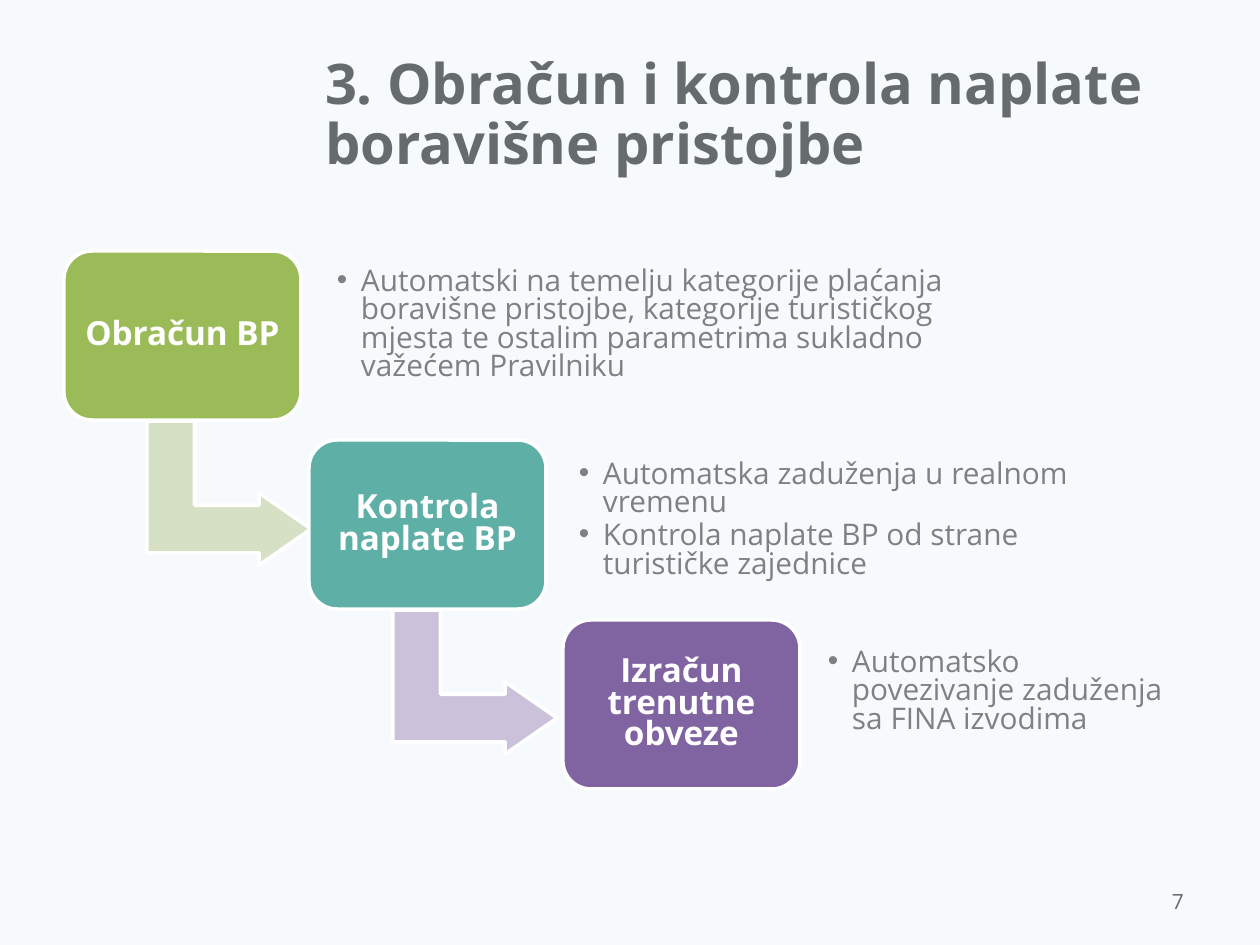
"""Build a slide with three descending steps, their explanations and bent arrows."""
from dataclasses import dataclass

from lxml import etree
from pptx import Presentation
from pptx.dml.color import RGBColor
from pptx.enum.shapes import MSO_SHAPE
from pptx.enum.text import MSO_ANCHOR, MSO_AUTO_SIZE, PP_ALIGN
from pptx.oxml.ns import qn
from pptx.util import Emu, Pt

BOX, ARROW = MSO_SHAPE.ROUNDED_RECTANGLE, MSO_SHAPE.BENT_UP_ARROW
MIDDLE, NO_FIT = MSO_ANCHOR.MIDDLE, MSO_AUTO_SIZE.NONE
LEFT, CENTER, RIGHT = PP_ALIGN.LEFT, PP_ALIGN.CENTER, PP_ALIGN.RIGHT
PX = 914400 / 126


@dataclass(frozen=True)
class Theme:
    font: str = "Open Sans"
    background: str = "F6FAFD"
    heading: str = "666B6E"
    body: str = "808080"
    white: str = "FFFFFF"
    title_size: int = 32
    label_size: int = 19
    body_size: int = 17
    number_size: int = 12


@dataclass(frozen=True)
class Rect:
    x: int
    y: int
    w: int
    h: int


@dataclass(frozen=True)
class Style:
    size: int
    color: str
    bold: bool = False
    align: PP_ALIGN = LEFT
    spacing: float = 1.0
    after: float = 0
    inset: int = 9
    bullet: bool = False


@dataclass(frozen=True)
class Step:
    label: str
    fill: str
    x: int
    y: int
    placeholder: int
    area: Rect
    points: tuple[str, ...]


@dataclass(frozen=True)
class Arrow:
    fill: str
    x: int
    y: int


THEME = Theme()
TITLE = Style(THEME.title_size, THEME.heading, True, spacing=0.9, inset=13)
LABEL = Style(THEME.label_size, THEME.white, True, CENTER, 0.8, inset=8)
LIST = Style(THEME.body_size, THEME.body, spacing=0.8, after=2.5, bullet=True)
NUMBER = Style(THEME.number_size, THEME.heading, align=RIGHT, inset=13)

STEPS = (
    Step("Obračun BP", "9BBB59", 64, 251, 1, Rect(328, 268, 649, 115),
         ("Automatski na temelju kategorije plaćanja boravišne pristojbe, "
          "kategorije turističkog mjesta te ostalim parametrima sukladno "
          "važećem Pravilniku",)),
    Step("Kontrola naplate BP", "5EAFA6", 309, 440, 2, Rect(570, 438, 581, 165),
         ("Automatska zaduženja u realnom vremenu",
          "Kontrola naplate BP od strane turističke zajednice")),
    Step("Izračun trenutne obveze", "8064A2", 563, 620, 4, Rect(819, 624, 360, 136),
         ("Automatsko povezivanje zaduženja sa FINA izvodima",)),
)
ARROWS = (Arrow("D5E0C4", 157, 411), Arrow("CCC1DA", 403, 600))


def px(n: int) -> Emu:
    """Turn pixels into EMU."""
    return Emu(round(n * PX))


def apply(obj, values: dict) -> None:
    """Set each named attribute on an object."""
    for name, value in values.items():
        setattr(obj, name, value)


def place(sp, rect: Rect) -> None:
    """Move and size a shape."""
    apply(sp, {"left": px(rect.x), "top": px(rect.y),
               "width": px(rect.w), "height": px(rect.h)})


def add_bullet(p) -> None:
    """Give a paragraph a hanging round bullet."""
    pPr = p._p.get_or_add_pPr()
    pPr.set("marL", str(px(24)))
    pPr.set("indent", str(-px(24)))
    etree.SubElement(pPr, qn("a:buChar")).set("char", "•")


def write(sp, lines: tuple[str, ...], style: Style) -> None:
    """Fill a shape with formatted paragraphs."""
    tf = sp.text_frame
    inset = px(style.inset)
    apply(tf, {"word_wrap": True, "auto_size": NO_FIT, "vertical_anchor": MIDDLE,
               "margin_left": inset, "margin_right": inset,
               "margin_top": inset, "margin_bottom": inset})
    for i, line in enumerate(lines):
        p = tf.add_paragraph() if i else tf.paragraphs[0]
        if style.bullet:
            add_bullet(p)
        apply(p, {"alignment": style.align, "line_spacing": style.spacing,
                  "space_before": Pt(0), "space_after": Pt(style.after)})
        r = p.add_run()
        r.text = line
        apply(r.font, {"name": THEME.font, "size": Pt(style.size), "bold": style.bold})
        r.font.color.rgb = RGBColor.from_string(style.color)


def add_block(s, kind: MSO_SHAPE, rect: Rect, fill: str):
    """Add a filled shape with a white outline."""
    sp = s.shapes.add_shape(kind, px(rect.x), px(rect.y), px(rect.w), px(rect.h))
    sp.shadow.inherit = False
    sp.fill.solid()
    sp.fill.fore_color.rgb = RGBColor.from_string(fill)
    sp.line.color.rgb = RGBColor.from_string(THEME.white)
    sp.line.width = Pt(2)
    return sp


def add_arrow(s, arrow: Arrow) -> None:
    """Add an arrow that turns from down to right."""
    sp = add_block(s, ARROW, Rect(arrow.x, arrow.y, 144, 164), arrow.fill)
    sp.rotation = 90
    for i, value in enumerate((0.33, 0.25, 0.36)):
        sp.adjustments[i] = value


def add_step(s, step: Step) -> None:
    """Add a step box and its bullet list."""
    sp = add_block(s, BOX, Rect(step.x, step.y, 237, 169), step.fill)
    write(sp, (step.label,), LABEL)
    body = s.placeholders[step.placeholder]
    place(body, step.area)
    write(body, step.points, LIST)


def main() -> None:
    """Build and save the slide."""
    prs = Presentation()
    apply(prs, {"slide_width": px(1260), "slide_height": px(945)})
    s = prs.slides.add_slide(prs.slide_layouts[4])
    s.background.fill.solid()
    s.background.fill.fore_color.rgb = RGBColor.from_string(THEME.background)
    place(s.shapes.title, Rect(312, 38, 885, 157))
    write(s.shapes.title, ("3. Obračun i kontrola naplate boravišne pristojbe",), TITLE)
    for arrow in ARROWS:
        add_arrow(s, arrow)
    for step in STEPS:
        add_step(s, step)
    number = s.shapes.add_textbox(px(903), px(876), px(294), px(50))
    write(number, ("7",), NUMBER)
    for sp in list(s.placeholders):
        if not sp.text_frame.text:
            sp.element.getparent().remove(sp.element)
    prs.save("out.pptx")


if __name__ == "__main__":
    main()
